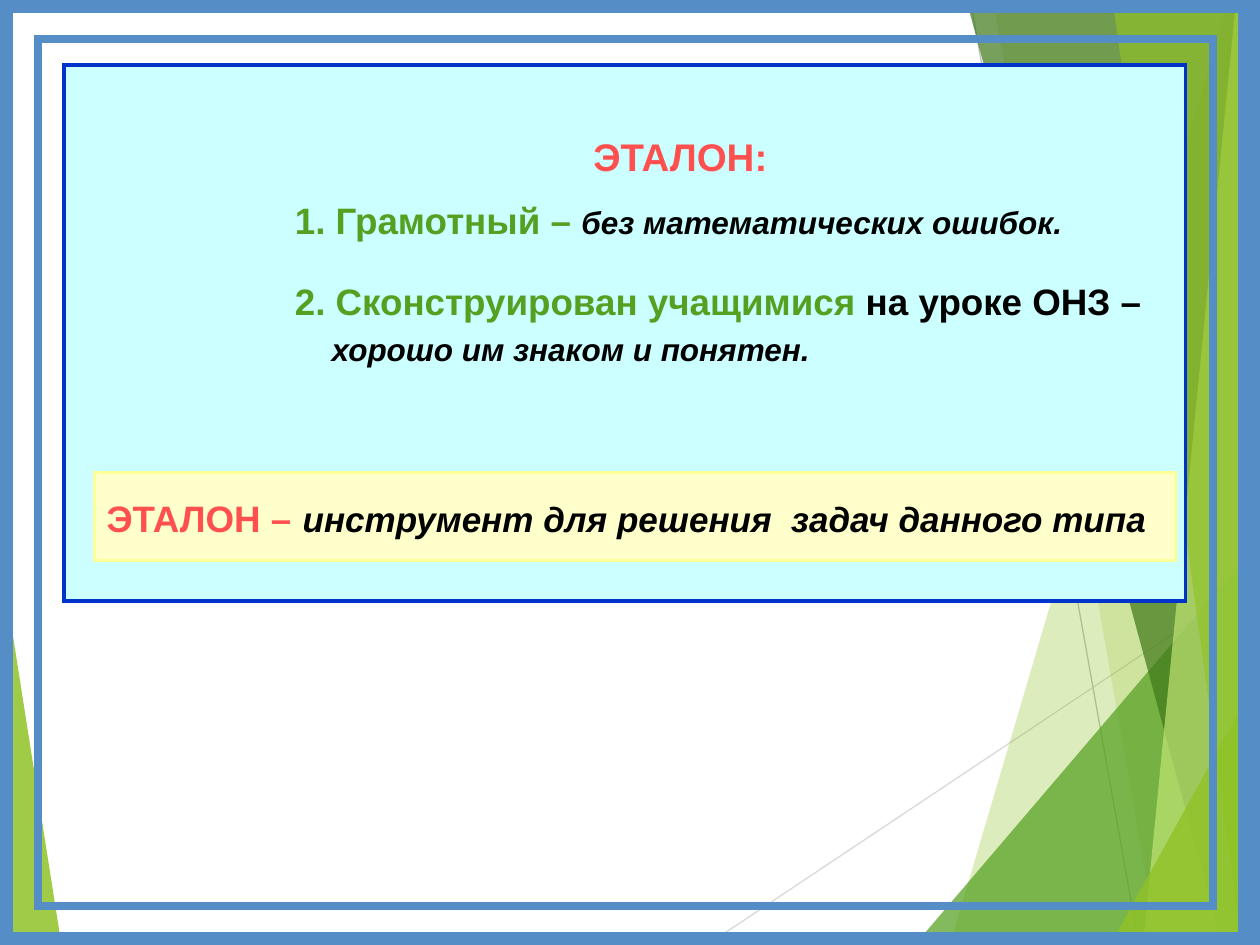
"""Build the slide that defines a reference pattern (ЭТАЛОН) on a faceted green background."""
from lxml.etree import SubElement
from pptx import Presentation
from pptx.dml.color import RGBColor as RGB
from pptx.enum.shapes import MSO_CONNECTOR as CONN, MSO_SHAPE as SHAPE
from pptx.enum.text import MSO_ANCHOR as ANCHOR, MSO_AUTO_SIZE as FIT, PP_ALIGN as ALIGN
from pptx.oxml.ns import qn
from pptx.util import Cm, Pt

C = {
    "lime": "90C226", "green": "54A021", "dark": "3F7819", "pale": "C0E474",
    "gray": "D9D9D9", "silver": "BFBFBF", "frame": "558EC7",
    "panel": "CCFFFF", "blue": "0033CC", "cream": "FFFFCC", "yellow": "FFFF99",
    "red": "FF5050", "black": "000000",
}
W, H = 25.4, 19.05


def add_box(x, y, w, h, line, width, fill=None):
    sp = s.shapes.add_shape(SHAPE.RECTANGLE, Cm(x), Cm(y), Cm(w), Cm(h))
    sp.shadow.inherit = False
    if fill:
        sp.fill.solid()
        sp.fill.fore_color.rgb = RGB.from_string(C[fill])
    else:
        sp.fill.background()
    sp.line.color.rgb = RGB.from_string(C[line])
    sp.line.width = Pt(width)
    SubElement(sp.line._ln, qn("a:miter"), lim="800000")
    return sp


def add_runs(p, runs):
    for text, size, color, italic in runs:
        r = p.add_run()
        r.text = text
        r.font.name = "Arial"
        r.font.size = Pt(size)
        r.font.bold = True
        r.font.italic = italic
        r.font.color.rgb = RGB.from_string(C[color])


prs = Presentation()
prs.slide_width, prs.slide_height = Cm(W), Cm(H)
s = prs.slides.add_slide(prs.slide_layouts[1])
title, body = s.placeholders[0], s.placeholders[1]

facets = [
    ("lime", 85, [(0, 11.15), (1.24, H), (0, H)]),
    ("lime", 30, [(24.77, 0), (19.15, H), (W, H), (W, 0)]),
    ("lime", 20, [(20.02, 0), (23.34, H), (W, H), (W, 0)]),
    ("green", 72, [(18.44, H), (W, 10.9), (W, H)]),
    ("dark", 70, [(19.48, 0), (24.64, H), (W, H), (W, 0)]),
    ("pale", 70, [(24.92, 0), (23.04, H), (W, H), (W, 0)]),
    ("lime", 65, [(22.43, 0), (25.04, H), (W, H), (W, 0)]),
    ("lime", 80, [(22.38, H), (W, 13.59), (W, H)]),
]
rays = [("gray", 14.25, H, W, 11.61), ("silver", 19.56, 0, 22.96, H)]

for i, (color, alpha, points) in enumerate(facets):
    corners = [(Cm(x), Cm(y)) for x, y in points]
    fb = s.shapes.build_freeform(*corners[0])
    fb.add_line_segments(corners[1:], close=True)
    sp = fb.convert_to_shape()
    sp.shadow.inherit = False
    sp.fill.solid()
    sp.fill.fore_color.rgb = RGB.from_string(C[color])
    clr = sp.fill._xPr.find(qn("a:solidFill"))[0]
    SubElement(clr, qn("a:alpha"), val=str(alpha * 1000))
    sp.line.fill.background()
    if i == 0:
        for ray_color, *ends in rays:
            ray = s.shapes.add_connector(CONN.STRAIGHT, *[Cm(v) for v in ends])
            ray.line.color.rgb = RGB.from_string(C[ray_color])
            ray.line.width = Pt(0.75)
            SubElement(ray._element.spPr, qn("a:effectLst"))

add_box(0, 0, 25.22, H, "frame", 15)
add_box(0.76, 0.79, 23.7, 17.48, "frame", 4.5)
add_box(1.3, 1.32, 22.6, 10.8, "blue", 2.25, "panel")

for ph, x, y, w, h in [(title, 5.69, 2.5, 16.05, 1.3), (body, 5.69, 3.9, 19.1, 3.8)]:
    s.shapes._spTree.append(ph._element)
    ph.left, ph.top, ph.width, ph.height = Cm(x), Cm(y), Cm(w), Cm(h)
    tf = ph.text_frame
    tf.word_wrap = True
    tf.auto_size = FIT.NONE
    tf.margin_top = tf.margin_bottom = Cm(0.13)

title.text_frame.vertical_anchor = ANCHOR.MIDDLE
p = title.text_frame.paragraphs[0]
p.alignment = ALIGN.CENTER
add_runs(p, [("ЭТАЛОН:", 22, "red", False)])

items = [
    (0, 24, [("1. Грамотный – ", 21, "green", False),
             ("без математических ошибок.", 18, "black", True)]),
    (20, 26, [("2. Сконструирован учащимися", 21, "green", False),
              (" на уроке ОНЗ – ", 21, "black", False),
              ("хорошо им знаком и понятен.", 18, "black", True)]),
]
tf = body.text_frame
tf.vertical_anchor = ANCHOR.TOP
for i, (before, spacing, runs) in enumerate(items):
    p = tf.add_paragraph() if i else tf.paragraphs[0]
    p.alignment = ALIGN.LEFT
    p.space_before, p.line_spacing = Pt(before), Pt(spacing)
    pPr = p._p.get_or_add_pPr()
    pPr.set("marL", str(Cm(0.74)))
    pPr.set("indent", str(-Cm(0.74)))
    SubElement(pPr, qn("a:buNone"))
    add_runs(p, runs)

sp = add_box(1.9, 9.53, 21.8, 1.78, "yellow", 1.75, "cream")
tf = sp.text_frame
tf.word_wrap = True
tf.vertical_anchor = ANCHOR.MIDDLE
p = tf.paragraphs[0]
p.alignment = ALIGN.LEFT
add_runs(p, [("ЭТАЛОН –", 21, "red", False), (" ", 23, "red", False),
             ("инструмент для решения  задач данного типа", 20, "black", True)])

prs.save("out.pptx")
